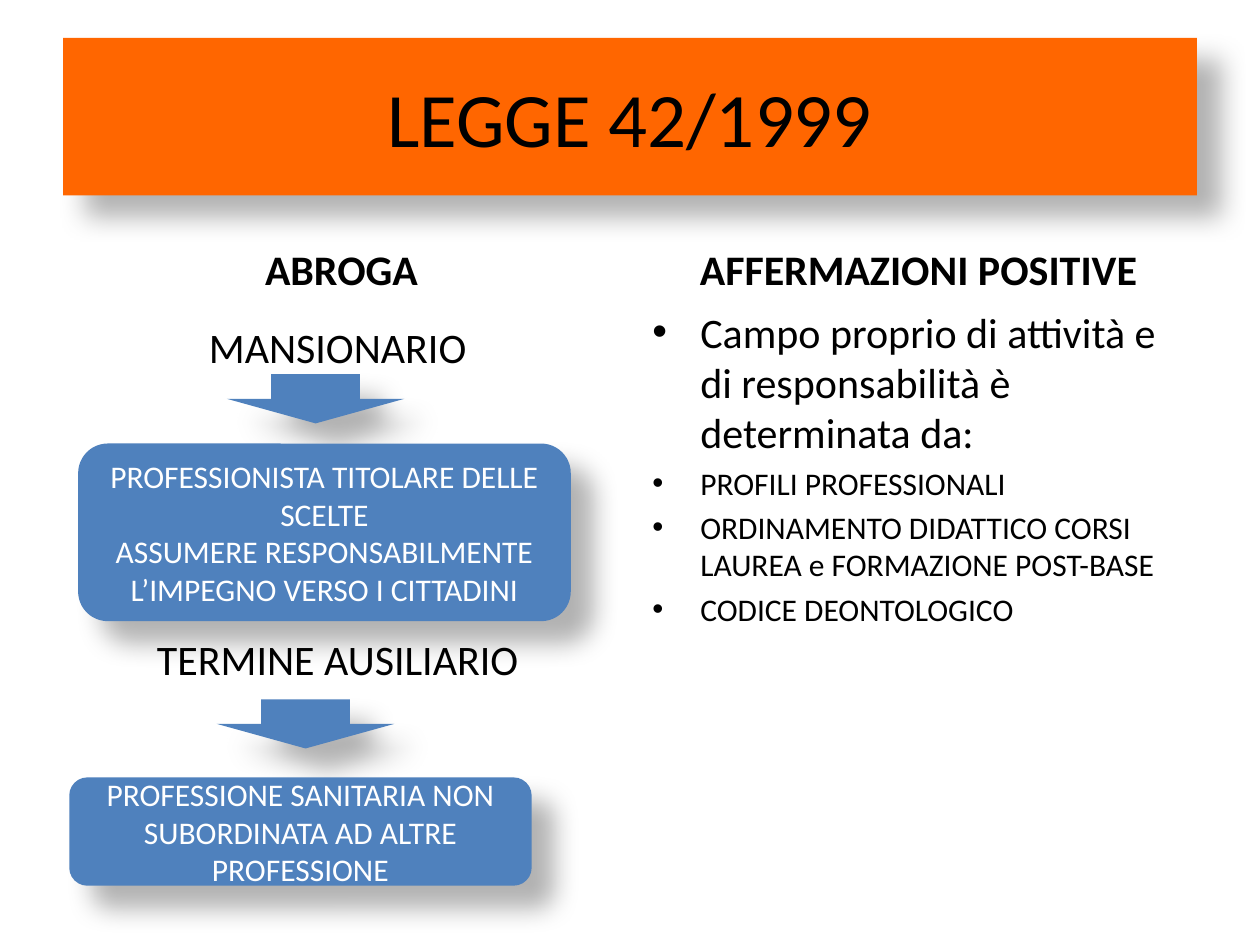
from collections import namedtuple
from dataclasses import dataclass

from lxml import etree
from pptx import Presentation
from pptx.dml.color import RGBColor
from pptx.enum.shapes import MSO_SHAPE
from pptx.enum.text import MSO_ANCHOR, PP_ALIGN
from pptx.oxml.ns import qn
from pptx.util import Inches, Pt

ROUNDED, DOWN_ARROW = MSO_SHAPE.ROUNDED_RECTANGLE, MSO_SHAPE.DOWN_ARROW
TOP, MIDDLE, BOTTOM = MSO_ANCHOR.TOP, MSO_ANCHOR.MIDDLE, MSO_ANCHOR.BOTTOM
LEFT, CENTER = PP_ALIGN.LEFT, PP_ALIGN.CENTER
TITLE_ONLY = 5

Box = namedtuple("Box", "left top width height")


@dataclass(frozen=True)
class Theme:
    font: str = "Calibri"
    title_size: int = 44
    body_size: int = 24
    detail_size: int = 18
    ink: str = "000000"
    paper: str = "FFFFFF"
    banner: str = "FF6600"
    accent: str = "4F81BD"


THEME = Theme()
SLIDE_WIDTH, SLIDE_HEIGHT = 10, 7.5
MARGIN = SLIDE_WIDTH * 0.05
COLUMN_WIDTH = 4.42
COLUMN_TOP, HEADING_HEIGHT = 1.68, 0.7
COLUMN_HEIGHT = 5.02
HANGING = Inches(0.38)
ARROW_WIDTH, ARROW_HEIGHT = 1.41, 0.39


def inches(box):
    return [Inches(length) for length in box]


def inside(box, left, top, width, height):
    return Box(box.left + left, box.top + top, width, height)


def write(frame, lines, size, color=THEME.ink, bold=False, align=CENTER, anchor=TOP):
    frame.word_wrap = True
    frame.vertical_anchor = anchor
    for index, line in enumerate(lines):
        paragraph = frame.paragraphs[0] if index == 0 else frame.add_paragraph()
        paragraph.text = line
        paragraph.alignment = align
        font = paragraph.font
        font.name, font.size, font.bold = THEME.font, Pt(size), bold
        font.color.rgb = RGBColor.from_string(color)
    return frame.paragraphs


def add_text(slide, box, lines, size, **style):
    frame = slide.shapes.add_textbox(*inches(box)).text_frame
    return write(frame, lines, size, **style)


def paint_raised(shape, color):
    """Flat fill with a soft shadow towards the lower right."""
    shape.fill.solid()
    shape.fill.fore_color.rgb = RGBColor.from_string(color)
    shape.line.fill.background()
    effects = shape._element.spPr.get_or_add_effectLst() if hasattr(
        shape._element.spPr, "get_or_add_effectLst") else None
    if effects is None:
        effects = etree.SubElement(shape._element.spPr, qn("a:effectLst"))
    shadow = etree.SubElement(effects, qn("a:outerShdw"), blurRad=str(Pt(15)),
                              dist=str(Pt(18)), dir=str(45 * 60000),
                              algn="tl", rotWithShape="0")
    tint = etree.SubElement(shadow, qn("a:srgbClr"), val=THEME.ink)
    etree.SubElement(tint, qn("a:alpha"), val="30000")


def add_raised(slide, preset, box):
    shape = slide.shapes.add_shape(preset, *inches(box))
    paint_raised(shape, THEME.accent)
    return shape


def add_bullet(paragraph):
    properties = paragraph._p.get_or_add_pPr()
    properties.set("marL", str(HANGING))
    properties.set("indent", str(-HANGING))
    etree.SubElement(properties, qn("a:buFont"), typeface="Arial")
    etree.SubElement(properties, qn("a:buChar"), char="•")


def title_banner(slide, box, text):
    title = slide.shapes.title
    title.left, title.top, title.width, title.height = inches(box)
    paint_raised(title, THEME.banner)
    write(title.text_frame, [text], THEME.title_size, anchor=MIDDLE)


def column_heading(slide, column, text):
    add_text(slide, inside(column, 0, 0, column.width, HEADING_HEIGHT), [text],
             THEME.body_size, bold=True, anchor=BOTTOM)


def repealed_column(slide, column):
    column_heading(slide, column, "ABROGA")
    terms = add_text(slide, inside(column, -0.03, 0.82, column.width, 3.4),
                     ["MANSIONARIO", "TERMINE AUSILIARIO"], THEME.body_size)
    terms[1].space_before = Pt(149.6)

    outcomes = [
        ((1.3, 1.29), (0.12, 1.84, 3.91, 1.41),
         ["PROFESSIONISTA TITOLARE DELLE SCELTE",
          "ASSUMERE RESPONSABILMENTE L’IMPEGNO VERSO I CITTADINI"]),
        ((1.22, 3.87), (0.05, 4.49, 3.67, 0.86),
         ["PROFESSIONE SANITARIA NON SUBORDINATA AD ALTRE PROFESSIONE"]),
    ]
    for arrow_place, card_place, lines in outcomes:
        add_raised(slide, DOWN_ARROW,
                   inside(column, *arrow_place, ARROW_WIDTH, ARROW_HEIGHT))
        card = add_raised(slide, ROUNDED, inside(column, *card_place))
        write(card.text_frame, lines, THEME.detail_size,
              color=THEME.paper, anchor=MIDDLE)


def affirmed_column(slide, column):
    column_heading(slide, column, "AFFERMAZIONI POSITIVE")
    points = add_text(
        slide,
        inside(column, 0, HEADING_HEIGHT, column.width, column.height - HEADING_HEIGHT),
        ["Campo proprio di attività e di responsabilità è determinata da:",
         "PROFILI PROFESSIONALI",
         "ORDINAMENTO DIDATTICO CORSI LAUREA e FORMAZIONE POST-BASE",
         "CODICE DEONTOLOGICO"],
        THEME.detail_size, align=LEFT)
    points[0].font.size = Pt(THEME.body_size)
    for point in points[1:]:
        point.space_before = Pt(THEME.detail_size * 0.2)
    for point in points:
        add_bullet(point)


def main():
    deck = Presentation()
    deck.slide_width, deck.slide_height = Inches(SLIDE_WIDTH), Inches(SLIDE_HEIGHT)
    slide = deck.slides.add_slide(deck.slide_layouts[TITLE_ONLY])
    content_width = SLIDE_WIDTH - 2 * MARGIN
    left_column = Box(MARGIN, COLUMN_TOP, COLUMN_WIDTH, COLUMN_HEIGHT)
    right_column = left_column._replace(left=SLIDE_WIDTH - MARGIN - COLUMN_WIDTH)

    title_banner(slide, Box(MARGIN, SLIDE_HEIGHT * 0.04, content_width, 1.25),
                 "LEGGE 42/1999")
    repealed_column(slide, left_column)
    affirmed_column(slide, right_column)
    deck.save("out.pptx")


if __name__ == "__main__":
    main()
